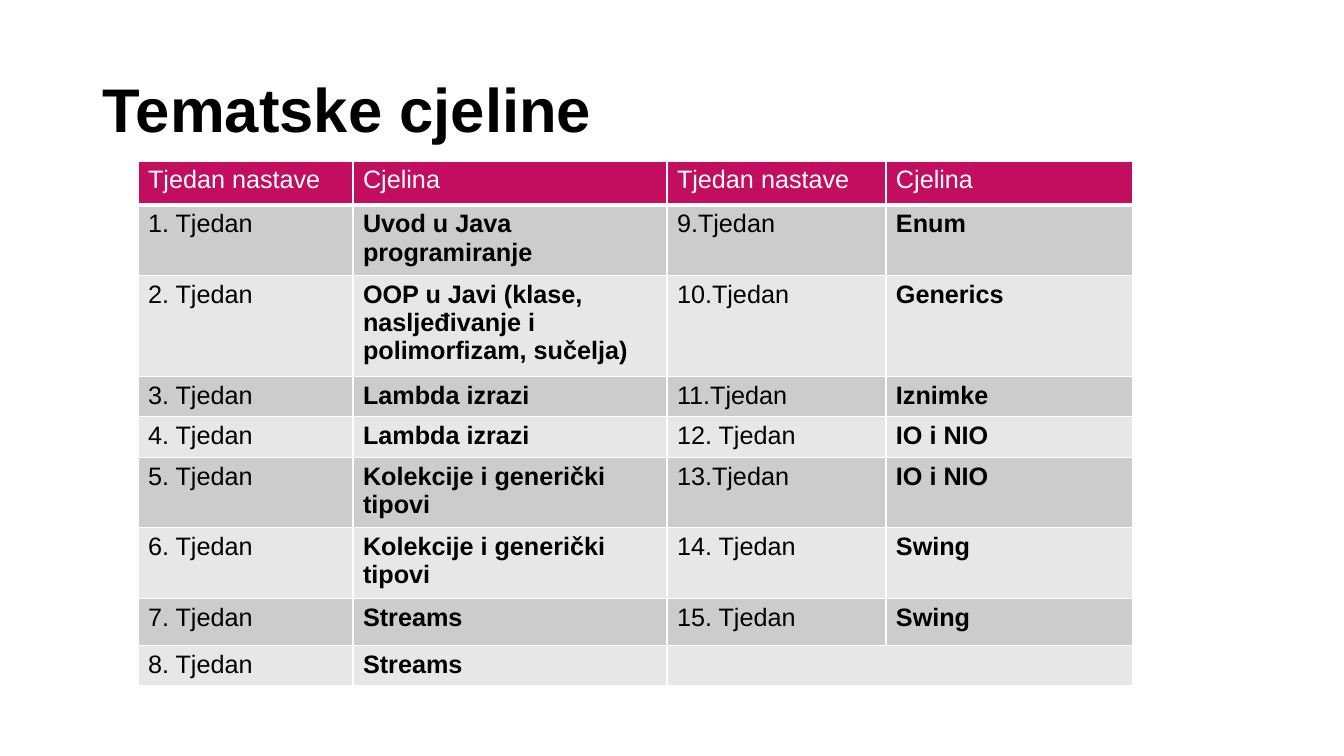
"""Build the course topics slide: a title above a table of weeks."""
from lxml import etree
from pptx import Presentation, util as u
from pptx.dml.color import RGBColor
from pptx.enum import text
from pptx.oxml.ns import qn

TITLE = "Tematske cjeline"
ROWS = [
    ("Tjedan nastave", "Cjelina", "Tjedan nastave", "Cjelina"),
    ("1. Tjedan", "Uvod u Java programiranje", "9.Tjedan", "Enum"),
    ("2. Tjedan", "OOP u Javi (klase, nasljeđivanje i polimorfizam, sučelja)",
     "10.Tjedan", "Generics"),
    ("3. Tjedan", "Lambda izrazi", "11.Tjedan", "Iznimke"),
    ("4. Tjedan", "Lambda izrazi", "12. Tjedan", "IO i NIO"),
    ("5. Tjedan", "Kolekcije i generički tipovi", "13.Tjedan", "IO i NIO"),
    ("6. Tjedan", "Kolekcije i generički tipovi", "14. Tjedan", "Swing"),
    ("7. Tjedan", "Streams", "15. Tjedan", "Swing"),
    ("8. Tjedan", "Streams", "", ""),
]
WIDTHS = [215, 314, 219, 247]
HEIGHTS = [44] + [40] * 6 + [47, 40]
TITLE_BOX = (93, 40, 1159, 146)
TABLE_BOX = (138, 161, sum(WIDTHS), 525)
COLORS = {"head": "C30E60", "odd": "CCCCCC", "even": "E7E7E7",
          "line": "FFFFFF", "light": "FFFFFF", "dark": "000000"}
FONT = "Arial"
SCALE = 914400 / 100.8


def px(num):
    return u.Emu(round(num * SCALE))


def color(key):
    return RGBColor.from_string(COLORS[key])


def style(para, size, key, bold):
    font = para.font
    font.name, font.size, font.bold = FONT, u.Pt(size), bold
    font.color.rgb = color(key)


def border(cell, base):
    props = cell._tc.get_or_add_tcPr()
    for spot, side in enumerate("LRTB"):
        width = base if side == "B" else 1
        line = etree.Element(qn(f"a:ln{side}"), w=str(u.Pt(width)))
        fill = etree.SubElement(line, qn("a:solidFill"))
        etree.SubElement(fill, qn("a:srgbClr"), val=COLORS["line"])
        props.insert(spot, line)


def add_title(slide):
    frame = slide.shapes.add_textbox(*map(px, TITLE_BOX)).text_frame
    frame.word_wrap = True
    frame.vertical_anchor = text.MSO_ANCHOR.MIDDLE
    para = frame.paragraphs[0]
    para.text = TITLE
    para.line_spacing = 0.9
    style(para, 44, "dark", True)


def add_weeks(slide):
    frame = slide.shapes.add_table(len(ROWS), len(WIDTHS), *map(px, TABLE_BOX))
    table = frame.table
    for col, width in zip(table.columns, WIDTHS):
        col.width = px(width)
    for row, height in zip(table.rows, HEIGHTS):
        row.height = px(height)
    frame.height = px(TABLE_BOX[3])
    for r, row in enumerate(ROWS):
        head = r == 0
        shade = "head" if head else ("even", "odd")[r % 2]
        for c, words in enumerate(row):
            cell = table.cell(r, c)
            cell.text = words
            style(cell.text_frame.paragraphs[0], 18,
                  "light" if head else "dark", not head and c % 2 == 1)
            cell.fill.solid()
            cell.fill.fore_color.rgb = color(shade)
            border(cell, 3 if head else 1)
    last = len(ROWS) - 1
    table.cell(last, 2).merge(table.cell(last, 3))


def main():
    deck = Presentation()
    deck.slide_width, deck.slide_height = px(1344), px(756)
    slide = deck.slides.add_slide(deck.slide_layouts[6])
    add_title(slide)
    add_weeks(slide)
    deck.save("out.pptx")


if __name__ == "__main__":
    main()
